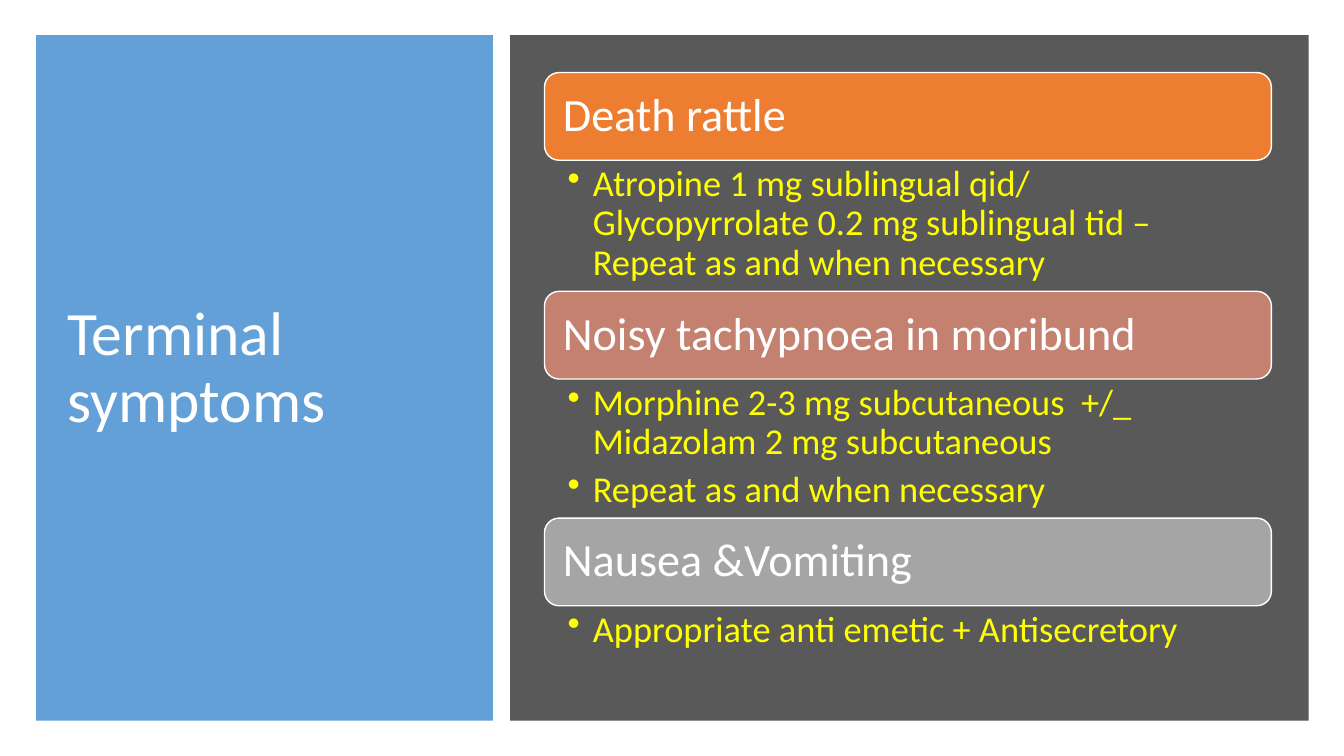
from typing import NamedTuple

from lxml import etree
from pptx import Presentation
from pptx import util as u
from pptx.dml.color import RGBColor
from pptx.enum import shapes, text
from pptx.oxml import ns

BLUE = RGBColor(0x5B, 0x9B, 0xD5)
CHARCOAL = RGBColor(0x59, 0x59, 0x59)
ORANGE = RGBColor(0xED, 0x7D, 0x31)
ROSE = RGBColor(0xC4, 0x81, 0x70)
GREY = RGBColor(0xA5, 0xA5, 0xA5)
WHITE = RGBColor(0xFF, 0xFF, 0xFF)
YELLOW = RGBColor(0xFF, 0xFF, 0x00)

FONT = "Calibri"
LIST_LEFT, LIST_TOP, LIST_WIDTH = 5.4, 0.72, 7.21
BAR_HEIGHT = 0.87
BULLET_INDENT = 0.25
BAR_INSETS = (0.14, 0.14, 0.14, 0.14)
TREATMENT_INSETS = (0.23, 0.05, 0.26, 0.05)


class Symptom(NamedTuple):
    name: str
    color: RGBColor
    treatments: list[str]
    treatment_height: float


SYMPTOMS = [
    Symptom("Death rattle", ORANGE,
            ["Atropine 1 mg sublingual qid/ Glycopyrrolate 0.2 mg sublingual tid – "
             "Repeat as and when necessary"], 1.3),
    Symptom("Noisy tachypnoea in moribund", ROSE,
            ["Morphine 2-3 mg subcutaneous  +/_ Midazolam 2 mg subcutaneous",
             "Repeat as and when necessary"], 1.38),
    Symptom("Nausea &Vomiting", GREY,
            ["Appropriate anti emetic + Antisecretory"], 0.6),
]


def add_bullet(paragraph) -> None:
    properties = paragraph._p.get_or_add_pPr()
    properties.set("marL", str(u.Inches(BULLET_INDENT)))
    properties.set("indent", str(-u.Inches(BULLET_INDENT)))
    etree.SubElement(properties, ns.qn("a:buChar")).set("char", "•")


def write(shape, lines: list[str], *, size: float, color: RGBColor,
          insets: tuple[float, ...] = (0.1, 0.05, 0.1, 0.05),
          anchor=text.MSO_ANCHOR.MIDDLE, space_after: float = 0,
          bulleted: bool = False) -> None:
    frame = shape.text_frame
    frame.word_wrap = True
    frame.vertical_anchor = anchor
    (frame.margin_left, frame.margin_top,
     frame.margin_right, frame.margin_bottom) = map(u.Inches, insets)
    for index, line in enumerate(lines):
        paragraph = frame.add_paragraph() if index else frame.paragraphs[0]
        paragraph.alignment = text.PP_ALIGN.LEFT
        paragraph.line_spacing = 0.9
        paragraph.space_after = u.Pt(space_after)
        if bulleted:
            add_bullet(paragraph)
        run = paragraph.add_run()
        run.text = line
        run.font.name = FONT
        run.font.size = u.Pt(size)
        run.font.color.rgb = color


def add_block(slide, kind, left: float, top: float, width: float, height: float,
              fill: RGBColor, outline: RGBColor | None = None):
    block = slide.shapes.add_shape(kind, *map(u.Inches, (left, top, width, height)))
    block.shadow.inherit = False
    block.fill.solid()
    block.fill.fore_color.rgb = fill
    if outline is None:
        block.line.fill.background()
    else:
        block.line.color.rgb = outline
        block.line.width = u.Pt(1)
    return block


def add_text_area(slide, left: float, top: float, width: float, height: float):
    return slide.shapes.add_textbox(*map(u.Inches, (left, top, width, height)))


def set_opacity(shape, percent: int) -> None:
    color = shape._element.spPr.find(ns.qn("a:solidFill"))[0]
    etree.SubElement(color, ns.qn("a:alpha")).set("val", str(percent * 1000))


def add_symptom(slide, symptom: Symptom, top: float) -> float:
    """Draw a heading bar with its treatments and return the bottom edge."""
    bar = add_block(slide, shapes.MSO_SHAPE.ROUNDED_RECTANGLE, LIST_LEFT, top,
                    LIST_WIDTH, BAR_HEIGHT, symptom.color, WHITE)
    write(bar, [symptom.name], size=33, color=WHITE, insets=BAR_INSETS)
    treatments_top = top + BAR_HEIGHT
    treatments = add_text_area(slide, LIST_LEFT, treatments_top, LIST_WIDTH,
                               symptom.treatment_height)
    write(treatments, symptom.treatments, size=26, color=YELLOW,
          insets=TREATMENT_INSETS, anchor=text.MSO_ANCHOR.TOP,
          space_after=6, bulleted=True)
    return treatments_top + symptom.treatment_height


def main() -> None:
    deck = Presentation()
    deck.slide_width, deck.slide_height = u.Inches(13.33), u.Inches(7.5)
    slide = deck.slides.add_slide(deck.slide_layouts[6])

    title_panel = add_block(slide, shapes.MSO_SHAPE.RECTANGLE,
                            0.36, 0.35, 4.53, 6.8, BLUE)
    set_opacity(title_panel, 95)
    title = add_text_area(slide, 0.57, 0.64, 4.07, 6.04)
    write(title, ["Terminal symptoms"], size=44, color=WHITE)

    add_block(slide, shapes.MSO_SHAPE.RECTANGLE, 5.06, 0.35, 7.92, 6.8, CHARCOAL)
    top = LIST_TOP
    for symptom in SYMPTOMS:
        top = add_symptom(slide, symptom, top)

    deck.save("out.pptx")


if __name__ == "__main__":
    main()
